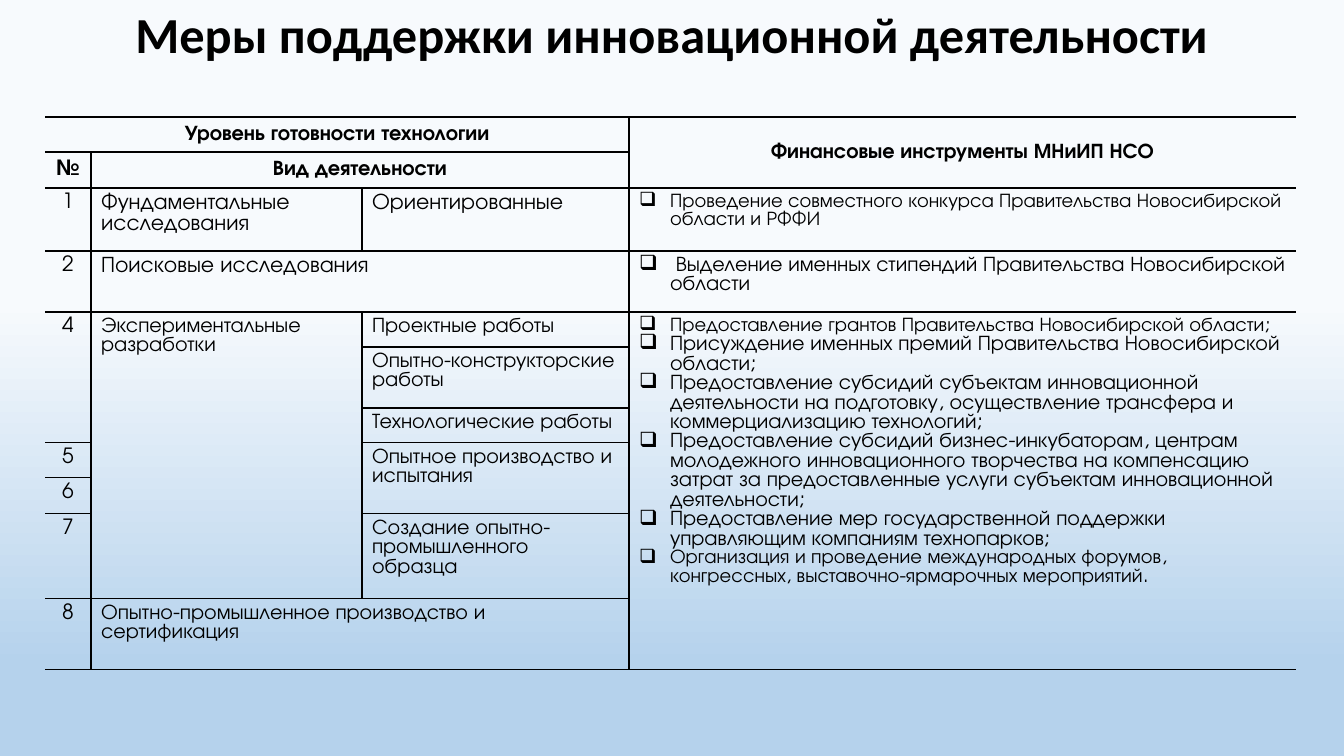
from dataclasses import dataclass

from pptx import Presentation
from pptx import util as u
from pptx.dml.color import RGBColor
from pptx.enum import text
from pptx.oxml import parse_xml
from pptx.oxml.ns import nsdecls

PX = 9071  # EMU in one px at 100.8 px to the inch
BLACK = "000000"
FONT = "TeX Gyre Adventor"
COLUMNS = (46, 271, 267, 667)
ROWS = (35, 36, 63, 61, 35, 61, 35, 35, 36, 85, 71)


@dataclass(frozen=True)
class Line:
    words: str
    size: int = 15


@dataclass(frozen=True)
class Entry:
    row: int
    column: int
    lines: tuple[Line, ...]
    rows: int = 1
    columns: int = 1


ENTRIES = (
    Entry(0, 0, (Line("Уровень готовности технологии"),), columns=3),
    Entry(0, 3, (Line("Финансовые инструменты МНиИП НСО"),), rows=2),
    Entry(1, 0, (Line("№"),)),
    Entry(1, 1, (Line("Вид деятельности"),), columns=2),
    Entry(2, 0, (Line("1"),)),
    Entry(2, 1, (Line("Фундаментальные исследования", 16),)),
    Entry(2, 2, (Line("Ориентированные", 16),)),
    Entry(2, 3, (Line("Проведение совместного конкурса Правительства Новосибирской области и РФФИ", 14),)),
    Entry(3, 0, (Line("2"),)),
    Entry(3, 1, (Line("Поисковые исследования", 16),), columns=2),
    Entry(3, 3, (Line(" Выделение именных стипендий Правительства Новосибирской области"),)),
    Entry(4, 0, (Line("4"),), rows=3),
    Entry(4, 1, (Line("Экспериментальные разработки"),), rows=6),
    Entry(4, 2, (Line("Проектные работы"),)),
    Entry(4, 3, (
        Line("Предоставление грантов Правительства Новосибирской области;", 14),
        Line("Присуждение именных премий Правительства Новосибирской области;"),
        Line("Предоставление субсидий субъектам инновационной деятельности на подготовку, "
             "осуществление трансфера и коммерциализацию технологий;"),
        Line("Предоставление субсидий бизнес-инкубаторам, центрам молодежного инновационного "
             "творчества на компенсацию затрат за предоставленные услуги субъектам "
             "инновационной деятельности;"),
        Line("Предоставление мер государственной поддержки управляющим компаниям технопарков;"),
        Line("Организация и проведение международных форумов, конгрессных, "
             "выставочно-ярмарочных мероприятий.", 14),
    ), rows=7),
    Entry(5, 2, (Line("Опытно-конструкторские работы"),)),
    Entry(6, 2, (Line("Технологические работы"),)),
    Entry(7, 0, (Line("5"),)),
    Entry(7, 2, (Line("Опытное производство и испытания"),), rows=2),
    Entry(8, 0, (Line("6"),)),
    Entry(9, 0, (Line("7"),)),
    Entry(9, 2, (Line("Создание опытно-промышленного образца"),)),
    Entry(10, 0, (Line("8"),)),
    Entry(10, 1, (Line("Опытно-промышленное производство и сертификация"),), columns=2),
)


def px(count: int) -> int:
    return u.Emu(count * PX)


def colour(code: str) -> RGBColor:
    return RGBColor.from_string(code)


def add_span(para, words: str, size: int, font: str, bold: bool) -> None:
    span = para.add_run()
    span.text = words
    span.font.size = u.Pt(size)
    span.font.name = font
    span.font.bold = bold
    span.font.color.rgb = colour(BLACK)


def add_bullet(para) -> None:
    properties = para._p.get_or_add_pPr()
    properties.set("marL", str(px(31)))
    properties.set("indent", str(-px(31)))
    properties.append(parse_xml(f'<a:buChar {nsdecls("a")} char="❑"/>'))


def draw_borders(cell, column: int) -> None:
    """Rule every side except the outer left and right of the table."""
    properties = cell._tc.get_or_add_tcPr()
    open_sides = {0: "L", len(COLUMNS) - 1: "R"}
    for side in "LRTB":
        if open_sides.get(column) == side:
            width, paint = 0, "<a:noFill/>"
        else:
            width, paint = u.Pt(1), f'<a:solidFill><a:srgbClr val="{BLACK}"/></a:solidFill>'
        properties.append(parse_xml(
            f'<a:ln{side} {nsdecls("a")} w="{width}">{paint}</a:ln{side}>'))
    cell.fill.background()


def fill_entry(table, entry: Entry) -> None:
    cell = table.cell(entry.row, entry.column)
    if entry.rows > 1 or entry.columns > 1:
        cell.merge(table.cell(entry.row + entry.rows - 1, entry.column + entry.columns - 1))
    heading = entry.row < 2
    cell.vertical_anchor = text.MSO_ANCHOR.MIDDLE if heading else text.MSO_ANCHOR.TOP
    box = cell.text_frame
    for index, line in enumerate(entry.lines):
        para = box.add_paragraph() if index else box.paragraphs[0]
        centred = heading or entry.column == 0
        para.alignment = text.PP_ALIGN.CENTER if centred else text.PP_ALIGN.LEFT
        if entry.column == 3 and not heading:
            add_bullet(para)
        add_span(para, line.words, line.size, FONT, heading)


def add_title(page) -> None:
    title = page.shapes.title
    title.left, title.top, title.width, title.height = px(0), px(-3), px(1344), px(72)
    box = title.text_frame
    box.auto_size = text.MSO_AUTO_SIZE.NONE
    box.vertical_anchor = text.MSO_ANCHOR.MIDDLE
    para = box.paragraphs[0]
    para.alignment = text.PP_ALIGN.CENTER
    add_span(para, "Меры поддержки инновационной деятельности", 36, "Calibri", True)


def add_support_table(page) -> None:
    table = page.shapes.add_table(len(ROWS), len(COLUMNS), px(45), px(117),
                                  px(sum(COLUMNS)), px(sum(ROWS))).table
    table.first_row = table.horz_banding = False
    for column, width in zip(table.columns, COLUMNS):
        column.width = px(width)
    for row, height in zip(table.rows, ROWS):
        row.height = px(height)
        for index, cell in enumerate(row.cells):
            draw_borders(cell, index)
    for entry in ENTRIES:
        fill_entry(table, entry)


def paint_background(page) -> None:
    fill = page.background.fill
    fill.gradient()
    fill.gradient_angle = 270
    for stop, (position, code) in zip(fill.gradient_stops, ((0.4, "F7FAFD"), (0.88, "B5D2EC"))):
        stop.position = position
        stop.color.rgb = colour(code)


def main() -> None:
    deck = Presentation()
    deck.slide_width, deck.slide_height = px(1344), px(756)
    page = deck.slides.add_slide(deck.slide_layouts[5])
    paint_background(page)
    add_title(page)
    add_support_table(page)
    deck.save("out.pptx")


if __name__ == "__main__":
    main()
